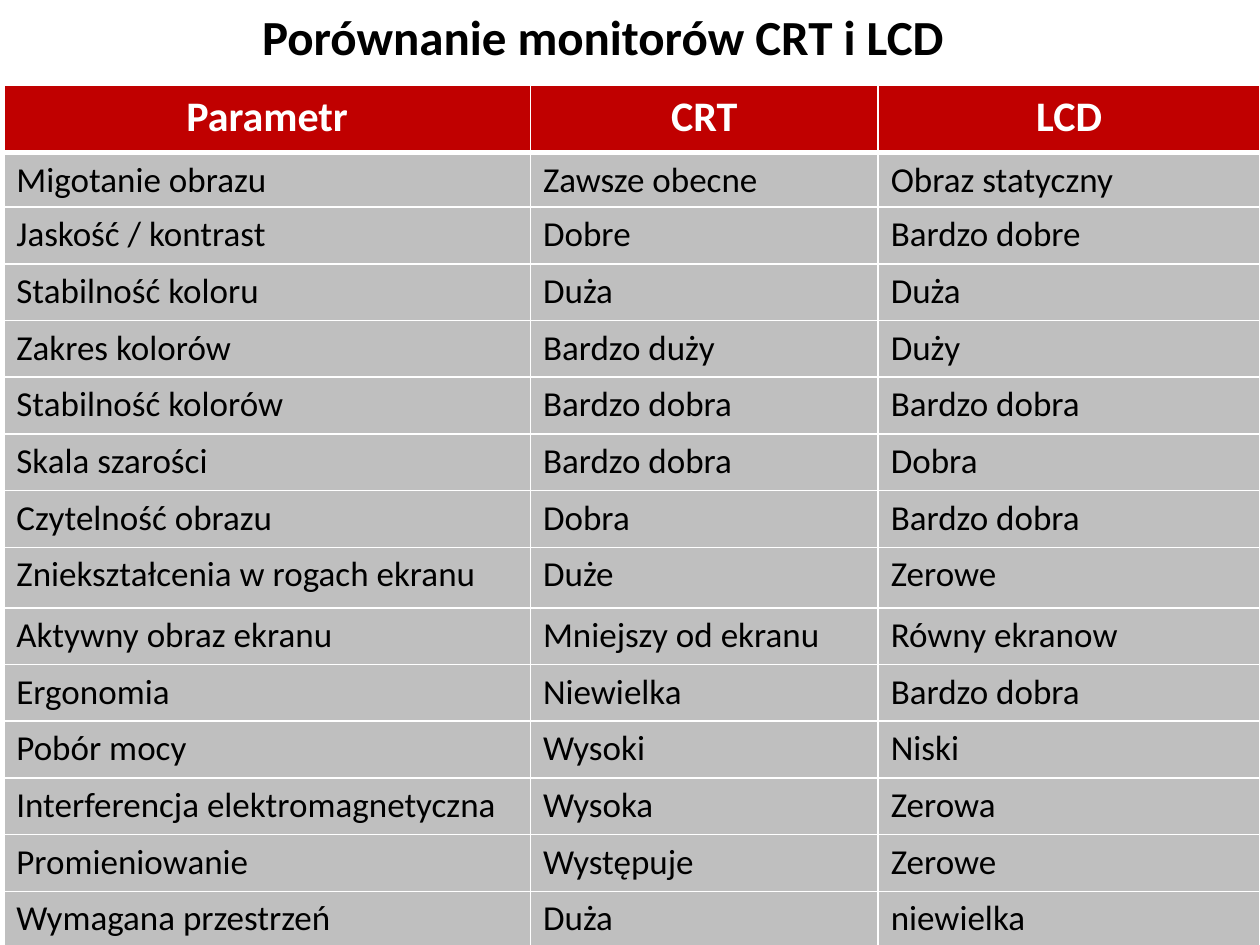
"""Build a one-slide comparison table of CRT and LCD monitors."""
import lxml.etree
import pptx
import pptx.dml.color
import pptx.enum.text
import pptx.oxml.ns
import pptx.util

WHITE = pptx.dml.color.RGBColor(0xFF, 0xFF, 0xFF)
BLACK = pptx.dml.color.RGBColor(0x00, 0x00, 0x00)
RED = pptx.dml.color.RGBColor(0xC0, 0x00, 0x00)
GRAY = pptx.dml.color.RGBColor(0xBF, 0xBF, 0xBF)
FONT = "Calibri"
TITLE = "Porównanie monitorów CRT i LCD"
TITLE_FRAME = (1.98, 0, 6.06, 0.57)
TABLE_LEFT, TABLE_TOP = 0.03, 0.68
COLUMN_WIDTHS = (4.18, 2.76, 3.03)
ROW_HEIGHT = 0.45
SPECIAL_HEIGHTS = {0: 0.53, 1: 0.43, 8: 0.48}
ROWS = (
    ("Parametr", "CRT", "LCD"),
    ("Migotanie obrazu", "Zawsze obecne", "Obraz statyczny"),
    ("Jaskość / kontrast", "Dobre", "Bardzo dobre"),
    ("Stabilność koloru", "Duża", "Duża"),
    ("Zakres kolorów", "Bardzo duży", "Duży"),
    ("Stabilność kolorów", "Bardzo dobra", "Bardzo dobra"),
    ("Skala szarości", "Bardzo dobra", "Dobra"),
    ("Czytelność obrazu", "Dobra", "Bardzo dobra"),
    ("Zniekształcenia w rogach ekranu", "Duże", "Zerowe"),
    ("Aktywny obraz ekranu", "Mniejszy od ekranu", "Równy ekranow"),
    ("Ergonomia", "Niewielka", "Bardzo dobra"),
    ("Pobór mocy", "Wysoki", "Niski"),
    ("Interferencja elektromagnetyczna", "Wysoka", "Zerowa"),
    ("Promieniowanie", "Występuje", "Zerowe"),
    ("Wymagana przestrzeń", "Duża", "niewielka"),
)


def write_text(frame, text, size, color, bold, align):
    """Put one formatted run into the first paragraph of a text frame."""
    para = frame.paragraphs[0]
    para.alignment = align
    span = para.add_run()
    span.text = text
    span.font.name = FONT
    span.font.size = pptx.util.Pt(size)
    span.font.bold = bold
    span.font.color.rgb = color


def set_borders(cell, widths):
    """Draw white cell borders, given widths in points by side."""
    qn = pptx.oxml.ns.qn
    properties = cell._tc.get_or_add_tcPr()
    for side, width in widths.items():
        line = lxml.etree.SubElement(
            properties, qn(f"a:ln{side}"), w=str(pptx.util.Pt(width)))
        fill = lxml.etree.SubElement(line, qn("a:solidFill"))
        lxml.etree.SubElement(fill, qn("a:srgbClr"), val=str(WHITE))


def format_title(slide):
    """Place and fill the title placeholder."""
    box = slide.shapes.title
    box.left, box.top, box.width, box.height = map(pptx.util.Inches, TITLE_FRAME)
    frame = box.text_frame
    frame.word_wrap = True
    frame.auto_size = pptx.enum.text.MSO_AUTO_SIZE.SHAPE_TO_FIT_TEXT
    frame.vertical_anchor = pptx.enum.text.MSO_ANCHOR.TOP
    write_text(frame, TITLE, 28, BLACK, True, pptx.enum.text.PP_ALIGN.LEFT)


def fill_cell(cell, text, row_index):
    """Format one cell as header or body according to its row."""
    header = row_index == 0
    set_borders(cell, {"L": 1, "R": 1, "T": 3 if row_index == 1 else 1,
                       "B": 3 if header else 1})
    cell.fill.solid()
    cell.fill.fore_color.rgb = RED if header else GRAY
    align = pptx.enum.text.PP_ALIGN
    if header:
        write_text(cell.text_frame, text, 24, WHITE, True, align.CENTER)
    else:
        write_text(cell.text_frame, text, 20, BLACK, False, align.LEFT)


def add_comparison(slide):
    """Add the comparison table."""
    heights = [SPECIAL_HEIGHTS.get(i, ROW_HEIGHT) for i in range(len(ROWS))]
    frame = (TABLE_LEFT, TABLE_TOP, sum(COLUMN_WIDTHS), sum(heights))
    table = slide.shapes.add_table(
        len(ROWS), len(COLUMN_WIDTHS), *map(pptx.util.Inches, frame)).table
    for column, width in zip(table.columns, COLUMN_WIDTHS):
        column.width = pptx.util.Inches(width)
    for row_index, (row, texts) in enumerate(zip(table.rows, ROWS)):
        row.height = pptx.util.Inches(heights[row_index])
        for cell, text in zip(row.cells, texts):
            fill_cell(cell, text, row_index)


def main():
    """Build and save the deck."""
    deck = pptx.Presentation()
    deck.slide_width = pptx.util.Inches(10)
    deck.slide_height = pptx.util.Inches(7.5)
    page = deck.slides.add_slide(deck.slide_layouts.get_by_name("Title Only"))
    format_title(page)
    add_comparison(page)
    deck.save("out.pptx")


if __name__ == "__main__":
    main()
